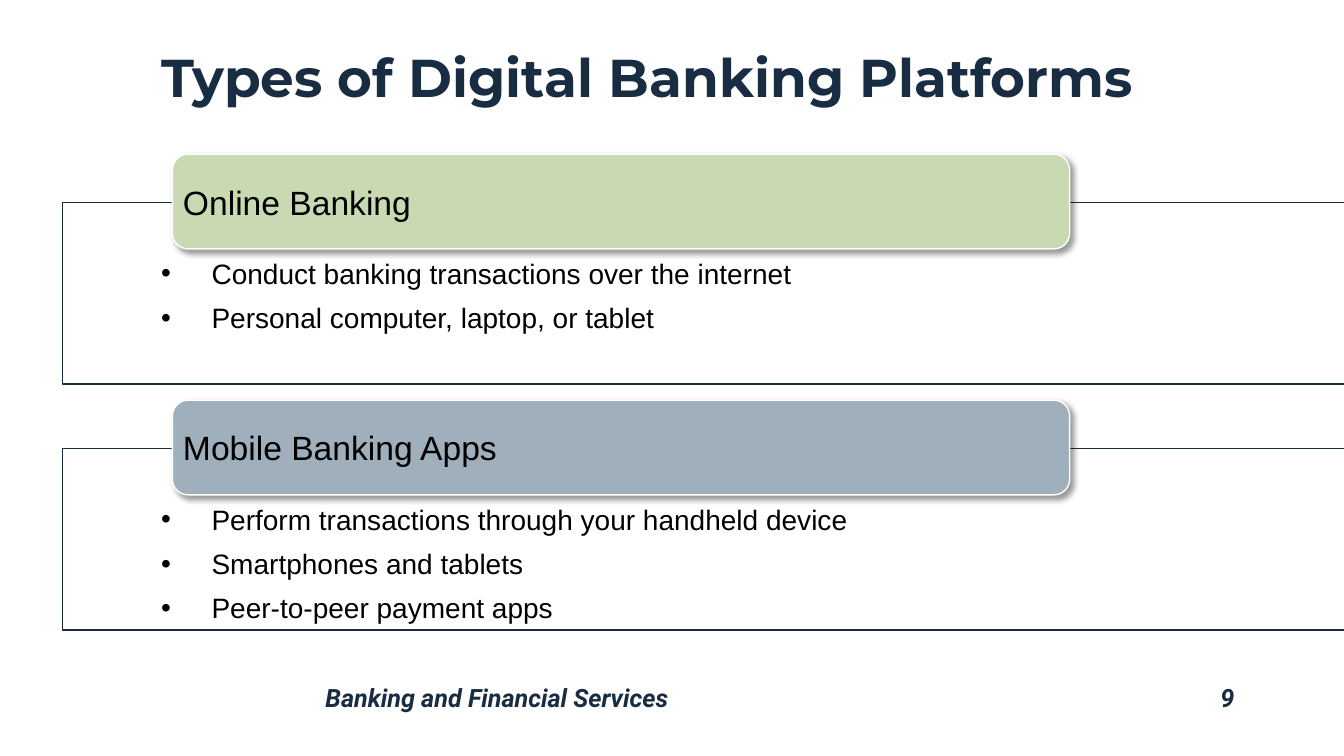
from lxml.etree import SubElement
from pptx import Presentation
from pptx.dml.color import RGBColor
from pptx.enum.shapes import MSO_SHAPE as Shape
from pptx.enum.text import MSO_ANCHOR as Anchor, PP_ALIGN as Align
from pptx.oxml import parse_xml
from pptx.oxml.ns import nsdecls, qn
from pptx.util import Inches, Pt

NAVY = RGBColor(0x18, 0x2C, 0x42)
GREEN = RGBColor(0xC9, 0xDA, 0xB3)
SLATE = RGBColor(0x9F, 0xAF, 0xBB)
WHITE = RGBColor(0xFF, 0xFF, 0xFF)
BLACK = RGBColor(0, 0, 0)

PLATFORMS = [
    ("Online Banking", GREEN,
     ["Conduct banking transactions over the internet",
      "Personal computer, laptop, or tablet"]),
    ("Mobile Banking Apps", SLATE,
     ["Perform transactions through your handheld device",
      "Smartphones and tablets",
      "Peer-to-peer payment apps"]),
]
FIRST_TOP = 1.53
PLATFORM_STEP = 2.44


def add_bullet(paragraph):
    """Give a paragraph a round bullet with a half-inch hanging indent."""
    properties = paragraph._p.get_or_add_pPr()
    properties.set("marL", str(Inches(0.5)))
    properties.set("indent", str(-Inches(0.5)))
    SubElement(properties, qn("a:buFont")).set("typeface", "Arial")
    SubElement(properties, qn("a:buChar")).set("char", "•")


def write(frame, lines, size, font="Arial", color=BLACK, bold=False, italic=False,
          align=Align.LEFT, anchor=Anchor.TOP, bullets=False):
    """Fill a text frame with one formatted paragraph per line."""
    frame.word_wrap = True
    frame.vertical_anchor = anchor
    for index, line in enumerate(lines):
        paragraph = frame.add_paragraph() if index else frame.paragraphs[0]
        paragraph.alignment = align
        paragraph.line_spacing = 0.9
        if index:
            paragraph.space_before = Pt(10)
        if bullets:
            add_bullet(paragraph)
        run = paragraph.add_run()
        run.text = line
        run.font.name = font
        run.font.size = Pt(size)
        run.font.color.rgb = color
        run.font.bold = bold
        run.font.italic = italic


def add_text(slide, left, top, width, height, lines, size, **style):
    """Add a text box with formatted lines."""
    box = slide.shapes.add_textbox(Inches(left), Inches(top), Inches(width), Inches(height))
    write(box.text_frame, lines, size, **style)


def add_block(slide, kind, left, top, width, height, fill, line):
    """Add a filled and outlined shape without a shadow."""
    block = slide.shapes.add_shape(
        kind, Inches(left), Inches(top), Inches(width), Inches(height))
    block.shadow.inherit = False
    block.fill.solid()
    block.fill.fore_color.rgb = fill
    block.line.color.rgb = line
    block.line.width = Pt(1)
    return block


def set_alpha(block, percent):
    """Make the solid fill of a shape partly transparent."""
    color = block.fill._xPr.find(qn("a:solidFill"))[0]
    SubElement(color, qn("a:alpha")).set("val", str(percent * 1000))


def cast_shadow(block):
    """Give a shape a soft shadow to the lower right."""
    effects = block._element.spPr.find(qn("a:effectLst"))
    effects.append(parse_xml(
        f'<a:outerShdw {nsdecls("a")} blurRad="{Pt(4)}" dist="{Pt(3)}" dir="2700000" '
        'algn="tl" rotWithShape="0"><a:srgbClr val="000000"><a:alpha val="40000"/>'
        '</a:srgbClr></a:outerShdw>'))


def add_platform(slide, top, heading, color, points):
    """Add a framed platform with its heading card and bullet points."""
    frame = add_block(slide, Shape.RECTANGLE, 0.62, top + 0.48, 12.72, 1.8, WHITE, NAVY)
    set_alpha(frame, 90)
    card = add_block(slide, Shape.ROUNDED_RECTANGLE, 1.71, top, 8.9, 0.94, color, WHITE)
    cast_shadow(card)
    card.text_frame.margin_left = Inches(0.06)
    card.text_frame.margin_top = Inches(0.1)
    write(card.text_frame, [heading], 24, anchor=Anchor.MIDDLE)
    add_text(slide, 1.5, top + 1, 9.87, 1.2, points, 20, bullets=True)


def main():
    """Build and save the slide."""
    deck = Presentation()
    deck.slide_width, deck.slide_height = Inches(13.33), Inches(7.5)
    slide = deck.slides.add_slide(deck.slide_layouts[6])

    for index, (heading, color, points) in enumerate(PLATFORMS):
        add_platform(slide, FIRST_TOP + index * PLATFORM_STEP, heading, color, points)

    add_text(slide, 1.5, 0.11, 10.84, 1.02, ["Types of Digital Banking Platforms"], 38,
             font="Montserrat", color=NAVY, bold=True, anchor=Anchor.BOTTOM)
    footer = dict(font="Roboto", color=NAVY, bold=True, italic=True)
    add_text(slide, 3.13, 6.75, 7.63, 0.38, ["Banking and Financial Services"], 18, **footer)
    add_text(slide, 10.76, 6.75, 1.58, 0.38, ["9"], 18, align=Align.RIGHT, **footer)
    deck.save("out.pptx")


if __name__ == "__main__":
    main()
